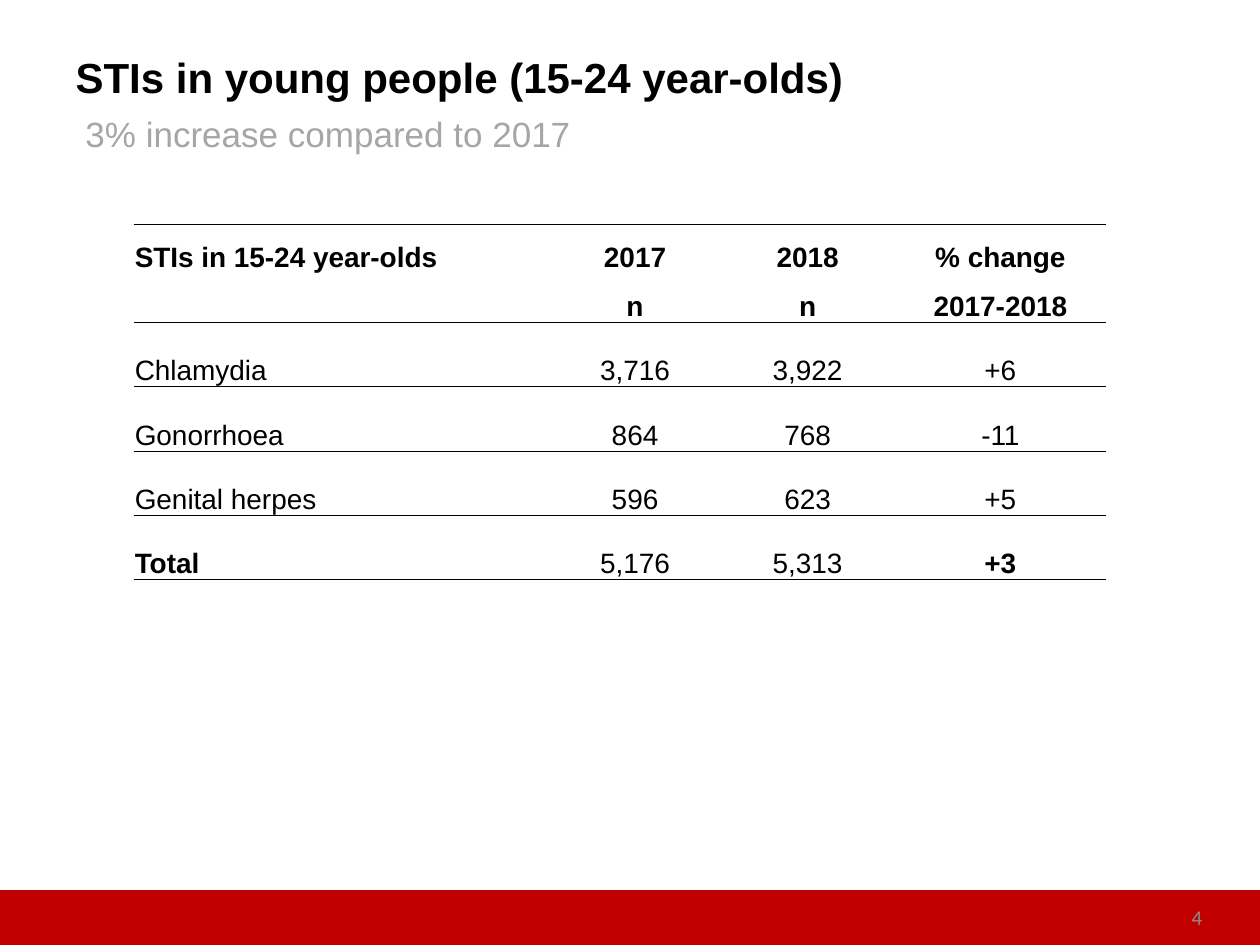
"""Build a slide with a table of STIs in young people, 2017 against 2018."""
from dataclasses import dataclass

from lxml import etree
from pptx import Presentation
from pptx import util as u
from pptx.dml.color import RGBColor
from pptx.enum import shapes, text
from pptx.oxml.ns import qn

HUES = {"ink": "000000", "sub": "A6A6A6", "num": "8C8C8C", "bar": "C00000"}
LEFT, MID, RIGHT = text.PP_ALIGN.LEFT, text.PP_ALIGN.CENTER, text.PP_ALIGN.RIGHT
COLS = (3.3, 1.36, 1.38, 1.68)
HEAD = 2


@dataclass
class Row:
    high: float
    cells: tuple[str, ...]
    bold: tuple[bool, ...] = (False,) * 4
    top: bool = False
    base: bool = True


ROWS = [
    Row(0.39, ("STIs in 15-24 year-olds", "2017", "2018", "% change"), (True,) * 4, True, False),
    Row(0.39, ("", "n", "n", "2017-2018"), (True,) * 4),
    Row(0.51, ("Chlamydia", "3,716", "3,922", "+6")),
    Row(0.51, ("Gonorrhoea", "864", "768", "-11")),
    Row(0.51, ("Genital herpes", "596", "623", "+5")),
    Row(0.51, ("Total", "5,176", "5,313", "+3"), (True, False, False, True)),
]


def hue(name: str) -> RGBColor:
    return RGBColor.from_string(HUES[name])


def write(frame, words: str, *, size=16, font="Arial", ink="ink", bold=False, align=LEFT) -> None:
    para = frame.paragraphs[0]
    para.alignment = align
    para.font.size = u.Pt(size)
    if words:
        run = para.add_run()
        run.text = words
        run.font.size, run.font.name, run.font.bold = u.Pt(size), font, bold
        run.font.color.rgb = hue(ink)


def rule(cell, top: bool, base: bool) -> None:
    props = cell._tc.get_or_add_tcPr()
    sides = {"a:lnL": False, "a:lnR": False, "a:lnT": top, "a:lnB": base}
    for spot, (tag, shown) in enumerate(sides.items()):
        line = etree.Element(qn(tag), w=str(u.Pt(0.5)))
        if shown:
            fill = etree.SubElement(line, qn("a:solidFill"))
            etree.SubElement(fill, qn("a:srgbClr"), val=HUES["ink"])
        else:
            etree.SubElement(line, qn("a:noFill"))
        props.insert(spot, line)


def box(slide, spot: tuple[float, ...], words: str, anchor=text.MSO_ANCHOR.TOP, **style) -> None:
    frame = slide.shapes.add_textbox(*map(u.Inches, spot)).text_frame
    frame.word_wrap = True
    frame.vertical_anchor = anchor
    write(frame, words, **style)


def grid(slide) -> None:
    high = sum(row.high for row in ROWS)
    spot = map(u.Inches, (1.06, 1.78, sum(COLS), high))
    table = slide.shapes.add_table(len(ROWS), len(COLS), *spot).table
    table.first_row = table.horz_banding = False
    for col, wide in zip(table.columns, COLS):
        col.width = u.Inches(wide)
    for r, row in enumerate(ROWS):
        table.rows[r].height = u.Inches(row.high)
        for c, words in enumerate(row.cells):
            cell = table.cell(r, c)
            cell.fill.background()
            cell.margin_left = cell.margin_right = cell.margin_top = u.Inches(0.01)
            cell.margin_bottom = 0
            cell.vertical_anchor = text.MSO_ANCHOR.BOTTOM
            write(cell.text_frame, words, bold=row.bold[c], align=MID if c else LEFT)
            rule(cell, row.top or r >= HEAD, row.base)


def main() -> None:
    deck = Presentation()
    deck.slide_width, deck.slide_height = u.Inches(10), u.Inches(7.5)
    slide = deck.slides.add_slide(deck.slide_layouts[5])

    bar = slide.shapes.add_shape(
        shapes.MSO_SHAPE.RECTANGLE, *map(u.Inches, (0, 7.08, 10, 0.42)))
    bar.shadow.inherit = False
    bar.fill.solid()
    bar.fill.fore_color.rgb = bar.line.color.rgb = hue("bar")
    bar.line.width = u.Pt(2)

    title = slide.shapes.title
    title.left, title.top, title.width, title.height = map(u.Inches, (0.5, 0.3, 7.75, 0.62))
    title.text_frame.vertical_anchor = text.MSO_ANCHOR.MIDDLE
    write(title.text_frame, "STIs in young people (15-24 year-olds)", size=24, bold=True)

    box(slide, (7.31, 7.08, 2.33, 0.4), "4", text.MSO_ANCHOR.MIDDLE,
        size=12, font="Calibri", ink="num", align=RIGHT)
    box(slide, (0.58, 0.84, 4.89, 0.44), "3% increase compared to 2017", size=20, ink="sub")
    grid(slide)
    deck.save("out.pptx")


if __name__ == "__main__":
    main()
